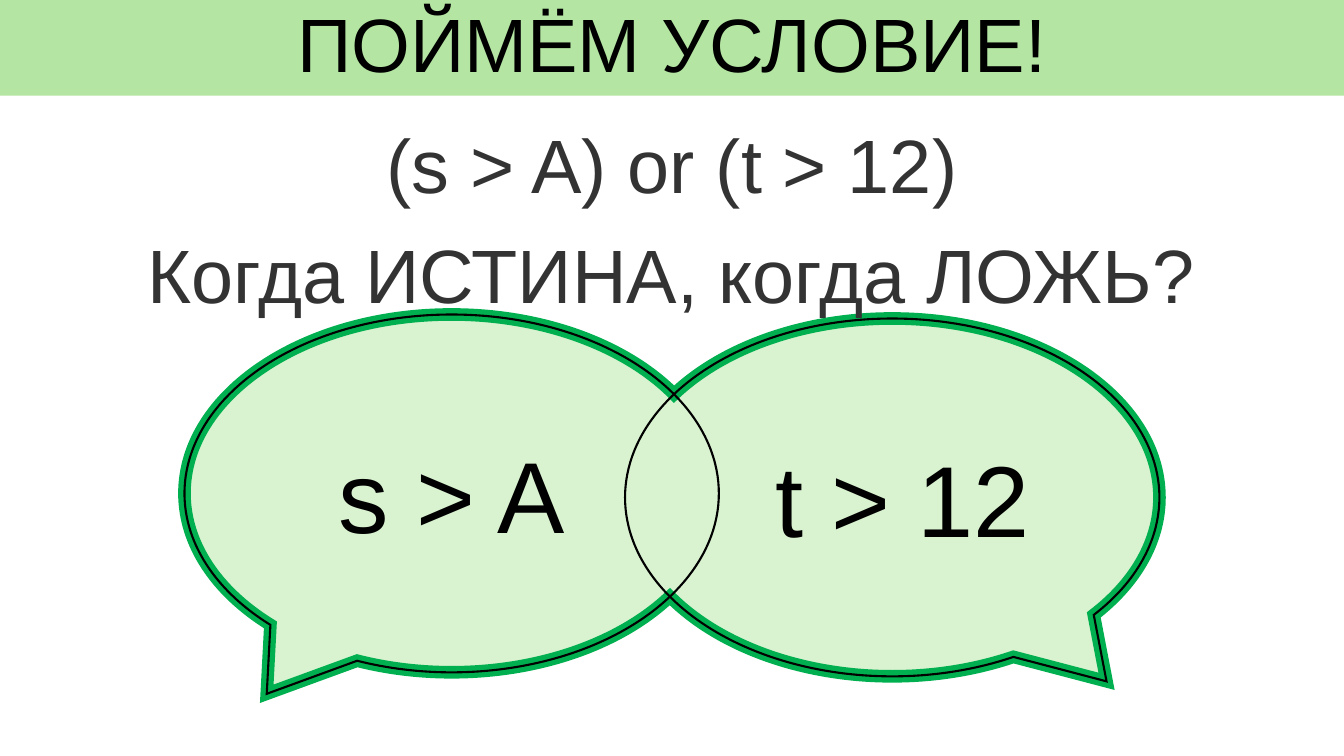
from math import acos, atan2, ceil, cos, degrees, floor, hypot, radians, sin, tan

from lxml import etree
from pptx import Presentation
from pptx.dml.color import RGBColor
from pptx.enum.shapes import MSO_SHAPE
from pptx.enum.text import MSO_ANCHOR, MSO_AUTO_SIZE, PP_ALIGN
from pptx.oxml.ns import qn
from pptx.util import Inches, Pt

CALLOUT = MSO_SHAPE.OVAL_CALLOUT
MIDDLE = MSO_ANCHOR.MIDDLE
CENTER = PP_ALIGN.CENTER
NO_AUTOFIT = MSO_AUTO_SIZE.NONE

FONT = "Arial"
COLORS = {
    "banner": "B4E5A2",
    "union": "D9F2D0",
    "border": "00B050",
    "ink": "000000",
    "question": "333333",
}
CALLOUT_WIDTH, CALLOUT_HEIGHT = 5.3, 3.55
TAIL_HALF_ANGLE = 11  # degrees, fixed by the callout preset


def color(name):
    return RGBColor.from_string(COLORS[name])


def write(shape, text, size, ink):
    frame = shape.text_frame
    frame.word_wrap = True
    frame.auto_size = NO_AUTOFIT
    frame.vertical_anchor = MIDDLE
    frame.text = text
    para = frame.paragraphs[0]
    para.alignment = CENTER
    font = para.runs[0].font
    font.name, font.size, font.bold = FONT, Pt(size), False
    font.color.rgb = color(ink)
    return para


def set_border(shape, ink, width):
    """Draw a solid line with sharp corners and no shadow."""
    shape.shadow.inherit = False
    shape.line.color.rgb = color(ink)
    shape.line.width = Pt(width)
    line = shape.line._get_or_add_ln()
    etree.SubElement(line, qn("a:miter")).set("lim", "800000")


def add_title(page, box, text):
    title = page.shapes.title
    title.left, title.top, title.width, title.height = map(Inches, box)
    title.fill.solid()
    title.fill.fore_color.rgb = color("banner")
    write(title, text, 54, "ink").line_spacing = 0.9


def add_question(page, box, text):
    textbox = page.shapes.add_textbox(*map(Inches, box))
    write(textbox, text, 54, "question").space_after = Pt(12)


def center_of(corner):
    return corner[0] + CALLOUT_WIDTH / 2, corner[1] + CALLOUT_HEIGHT / 2


def on_ellipse(center, angle, stretch=1, turn=0):
    """The ellipse's point at an angle, pushed along its tangent by turn."""
    across = stretch * cos(angle) + turn * sin(angle)
    down = stretch * sin(angle) - turn * cos(angle)
    return center[0] + CALLOUT_WIDTH / 2 * across, center[1] + CALLOUT_HEIGHT / 2 * down


def arc(center, start, end):
    """Bezier curves, cut at the quadrants, with the angle falling from start to end."""
    end = start - (start - end) % 360
    quadrants = range(ceil(start / 90) - 1, floor(end / 90), -1)
    stops = [radians(angle) for angle in (start, *(90 * q for q in quadrants), end)]
    curves = []
    for first, last in zip(stops, stops[1:]):
        reach = 4 / 3 * tan((first - last) / 4)
        curves.append((on_ellipse(center, first, turn=reach),
                       on_ellipse(center, last, turn=-reach),
                       on_ellipse(center, last)))
    return curves


def outer_edge(center, tail, bearing, half_overlap):
    """The part of a callout's outline that lies outside its neighbour."""
    tail_angle = degrees(atan2(tail[1], tail[0]))
    tip = center[0] + tail[0] * CALLOUT_WIDTH, center[1] + tail[1] * CALLOUT_HEIGHT
    tail_end = tail_angle - TAIL_HALF_ANGLE
    return [
        *arc(center, bearing - half_overlap, tail_angle + TAIL_HALF_ANGLE),
        (tip,),
        (on_ellipse(center, radians(tail_end)),),
        *arc(center, tail_end, bearing + half_overlap),
    ]


def bend(freeform, segments):
    """Turn each run of three points that makes up one curve into a Bezier curve."""
    path = next(freeform._element.iter(qn("a:path")))
    lines = iter(path.findall(qn("a:lnTo")))
    for segment in segments:
        first, *others = [next(lines) for point in segment]
        if others:
            first.tag = qn("a:cubicBezTo")
        for other in others:
            first.append(other[0])
            path.remove(other)


def add_union(page, left_corner, left_tail, right_corner, right_tail):
    left, right = center_of(left_corner), center_of(right_corner)
    across = (right[0] - left[0]) / (CALLOUT_WIDTH / 2)
    down = (right[1] - left[1]) / (CALLOUT_HEIGHT / 2)
    bearing = degrees(atan2(down, across))
    half_overlap = degrees(acos(hypot(across, down) / 2))
    segments = [
        *outer_edge(left, left_tail, bearing, half_overlap),
        *outer_edge(right, right_tail, bearing + 180, half_overlap),
    ]
    points = [(Inches(x), Inches(y)) for segment in segments for x, y in segment]
    builder = page.shapes.build_freeform(*points[-1])
    builder.add_line_segments(points, close=True)
    union = builder.convert_to_shape()
    bend(union, segments)
    union.fill.solid()
    union.fill.fore_color.rgb = color("union")
    set_border(union, "border", 9)


def add_callout(page, corner, tail, text, indent):
    box = (*corner, CALLOUT_WIDTH, CALLOUT_HEIGHT)
    callout = page.shapes.add_shape(CALLOUT, *map(Inches, box))
    callout.adjustments[0], callout.adjustments[1] = tail
    callout.fill.background()
    set_border(callout, "ink", 1.5)
    write(callout, text, 72, "ink")
    callout.text_frame.margin_left = Inches(indent)


def add_venn(page, left, top):
    left_corner, left_tail = (left, top), (-0.346, 0.56)
    right_corner, right_tail = (left + 4.37, top + 0.04), (0.401, 0.514)
    add_union(page, left_corner, left_tail, right_corner, right_tail)
    add_callout(page, left_corner, left_tail, "s > A", 0.1)
    add_callout(page, right_corner, right_tail, "t > 12", 0.31)


def main():
    deck = Presentation()
    deck.slide_width, deck.slide_height = Inches(13.33), Inches(7.5)
    page = deck.slides.add_slide(deck.slide_layouts[5])
    add_title(page, (0, 0, 13.33, 0.95), "ПОЙМЁМ УСЛОВИЕ!")
    add_venn(page, 1.83, 3.12)
    add_question(page, (1.77, 1.11, 9.79, 1.01), "(s > A) or (t > 12)")
    add_question(page, (0.3, 2.21, 12.72, 1.01), "Когда ИСТИНА, когда ЛОЖЬ?")
    deck.save("out.pptx")


if __name__ == "__main__":
    main()
